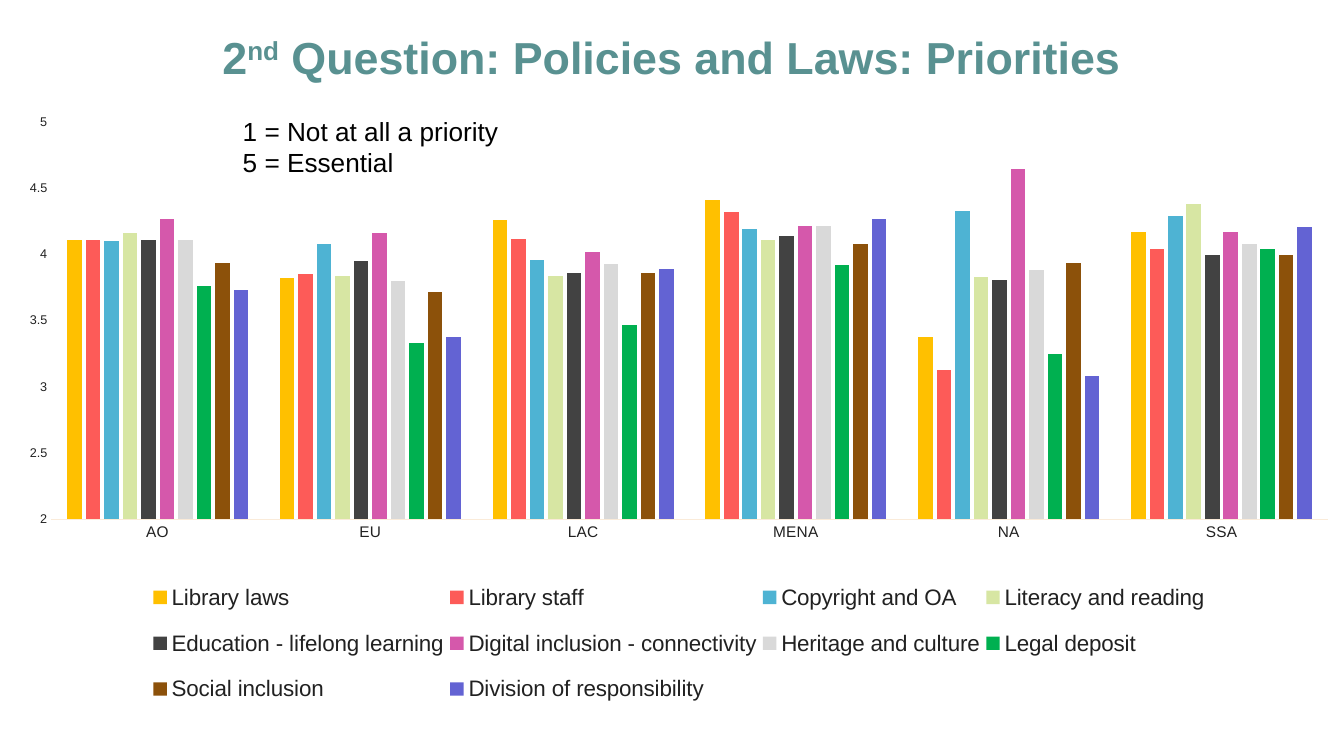
from dataclasses import dataclass

from lxml.etree import SubElement
from pptx import Presentation
from pptx.chart.data import CategoryChartData
from pptx.dml.color import RGBColor
from pptx.enum.chart import XL_CHART_TYPE, XL_LEGEND_POSITION, XL_TICK_MARK
from pptx.enum.text import PP_ALIGN
from pptx.oxml.ns import qn
from pptx.util import Pt


@dataclass(frozen=True)
class Theme:
    """Colours and type sizes of the slide."""
    font: str = "Arial"
    title: str = "599191"
    note: str = "000000"
    chart_text: str = "212121"
    axis_line: str = "FAEBD9"
    title_size: float = 32
    note_size: float = 18.7
    chart_size: float = 10
    category_size: float = 11
    value_size: float = 9
    legend_size: float = 16


THEME = Theme()
REGIONS = ("AO", "EU", "LAC", "MENA", "NA", "SSA")
PRIORITIES = (
    ("Library laws", "FFC000", (4.11, 3.82, 4.26, 4.41, 3.38, 4.17)),
    ("Library staff", "FD5B58", (4.11, 3.85, 4.12, 4.32, 3.13, 4.04)),
    ("Copyright and OA", "4EB3D3", (4.1, 4.08, 3.96, 4.19, 4.33, 4.29)),
    ("Literacy and reading", "D7E6A3", (4.16, 3.84, 3.84, 4.11, 3.83, 4.38)),
    ("Education - lifelong learning", "424242", (4.11, 3.95, 3.86, 4.14, 3.81, 4)),
    ("Digital inclusion - connectivity", "D558AB", (4.27, 4.16, 4.02, 4.22, 4.65, 4.17)),
    ("Heritage and culture", "D9D9D9", (4.11, 3.8, 3.93, 4.22, 3.88, 4.08)),
    ("Legal deposit", "00B050", (3.76, 3.33, 3.47, 3.92, 3.25, 4.04)),
    ("Social inclusion", "8C510A", (3.94, 3.72, 3.86, 4.08, 3.94, 4)),
    ("Division of responsibility", "6363D3", (3.73, 3.38, 3.89, 4.27, 3.08, 4.21)),
)


def style_font(font, size, color, bold=False):
    """Apply the theme font with a size and colour."""
    font.name = THEME.font
    font.size = Pt(size)
    font.bold = bold
    font.color.rgb = RGBColor.from_string(color)


def add_text(slide, box, paragraphs, size, color, bold=False, align=PP_ALIGN.LEFT):
    """Add a text box; each paragraph is a list of (text, baseline percent) runs."""
    frame = slide.shapes.add_textbox(*map(Pt, box)).text_frame
    frame.word_wrap = True
    for index, runs in enumerate(paragraphs):
        paragraph = frame.add_paragraph() if index else frame.paragraphs[0]
        paragraph.alignment = align
        for text, baseline in runs:
            run = paragraph.add_run()
            run.text = text
            style_font(run.font, size, color, bold)
            if baseline:
                run._r.get_or_add_rPr().set("baseline", str(baseline * 1000))
    return frame


def add_title(slide, box):
    """Add the centred heading with its raised ordinal."""
    runs = [("2", 0), ("nd", 30), (" Question: Policies and Laws: Priorities", 0)]
    frame = add_text(slide, box, [runs], THEME.title_size, THEME.title,
                     bold=True, align=PP_ALIGN.CENTER)
    frame.margin_left = frame.margin_right = Pt(9.4)
    frame.margin_top = frame.margin_bottom = Pt(5)


def add_scale_note(slide, box):
    """Add the explanation of the rating scale."""
    lines = ("1 = Not at all a priority", "5 = Essential")
    add_text(slide, box, [[(line, 0)] for line in lines], THEME.note_size, THEME.note)


def set_layout(parent, fractions, inner=False):
    """Place a chart part by fractions of the chart area."""
    layout = parent.find(qn("c:layout"))
    if layout is None:
        layout = SubElement(parent, qn("c:layout"))
        anchor = parent.find(qn("c:legendPos"))
        if anchor is None:
            parent.insert(0, layout)
        else:
            anchor.addnext(layout)
    manual = SubElement(layout, qn("c:manualLayout"))
    settings = [("layoutTarget", "inner")] if inner else []
    settings += [("xMode", "edge"), ("yMode", "edge")]
    settings += zip("xywh", fractions)
    for name, value in settings:
        SubElement(manual, qn(f"c:{name}")).set("val", str(value))


def clear_background(chart):
    """Make the chart area transparent and borderless."""
    chart_space = chart.element
    properties = SubElement(chart_space, qn("c:spPr"))
    SubElement(properties, qn("a:noFill"))
    SubElement(SubElement(properties, qn("a:ln")), qn("a:noFill"))
    chart_space.find(qn("c:chart")).addnext(properties)


def style_axes(chart):
    """Set the scale, lines and labels of both axes."""
    values, categories = chart.value_axis, chart.category_axis
    values.minimum_scale, values.maximum_scale, values.major_unit = 2, 5, 0.5
    values.has_major_gridlines = False
    values.format.line.fill.background()
    categories.format.line.color.rgb = RGBColor.from_string(THEME.axis_line)
    categories.format.line.width = Pt(0.75)
    for axis, size in ((values, THEME.value_size), (categories, THEME.category_size)):
        axis.major_tick_mark = axis.minor_tick_mark = XL_TICK_MARK.NONE
        style_font(axis.tick_labels.font, size, THEME.chart_text)


def add_priority_chart(slide, box):
    """Add the clustered columns of priorities by region, with legend."""
    data = CategoryChartData()
    data.categories = REGIONS
    for name, _, scores in PRIORITIES:
        data.add_series(name, scores)
    chart = slide.shapes.add_chart(
        XL_CHART_TYPE.COLUMN_CLUSTERED, *map(Pt, box), data).chart
    chart.has_title = False
    style_font(chart.font, THEME.chart_size, THEME.chart_text)
    clear_background(chart)
    style_axes(chart)
    plot = chart.plots[0]
    plot.gap_width, plot.overlap, plot.vary_by_categories = 219, -27, False
    for series, (_, color, _) in zip(plot.series, PRIORITIES):
        series.format.fill.solid()
        series.format.fill.fore_color.rgb = RGBColor.from_string(color)
        series.invert_if_negative = False
    chart.has_legend = True
    legend = chart.legend
    legend.position = XL_LEGEND_POSITION.BOTTOM
    legend.include_in_layout = False
    style_font(legend.font, THEME.legend_size, THEME.chart_text)
    plot_area = chart.element.find(qn("c:chart")).find(qn("c:plotArea"))
    set_layout(plot_area, (0.028, 0.026, 0.96, 0.624), inner=True)
    set_layout(legend._element, (0.1, 0.72, 0.8, 0.25))


def main():
    """Build and save the slide."""
    presentation = Presentation()
    presentation.slide_width, presentation.slide_height = Pt(960), Pt(540)
    slide = presentation.slides.add_slide(presentation.slide_layouts[6])
    add_title(slide, (0, 16, 960, 60))
    add_scale_note(slide, (166.3, 78.5, 204.5, 60))
    add_priority_chart(slide, (10, 75.6, 950, 454.3))
    presentation.save("out.pptx")


if __name__ == "__main__":
    main()
